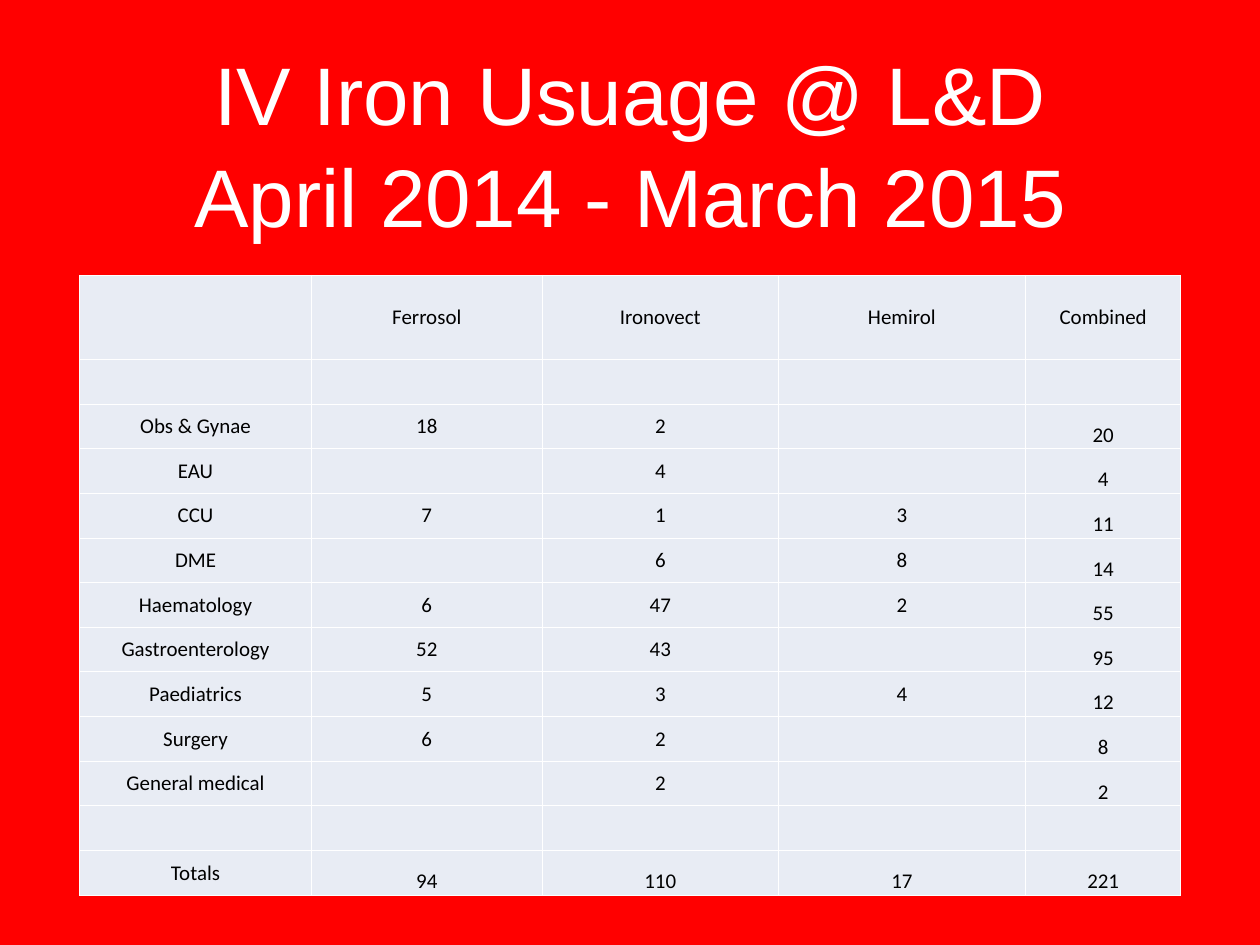
import pptx
import pptx.dml.color
import pptx.enum.text
import pptx.oxml
import pptx.oxml.ns
import pptx.util
from pptx.util import Cm

MIDDLE = pptx.enum.text.MSO_ANCHOR.MIDDLE
BOTTOM = pptx.enum.text.MSO_ANCHOR.BOTTOM
CENTER = pptx.enum.text.PP_ALIGN.CENTER
TITLE_LINES = ["IV Iron Usuage @ L&D", "April 2014 - March 2015"]
COLUMN_WIDTHS = [6.63, 6.63, 6.76, 7.09, 4.45]
HEADER_HEIGHT = 2.41
ROW_HEIGHT = 1.28
USAGE = [
    ["", "Ferrosol", "Ironovect", "Hemirol", "Combined"],
    [""] * 5,
    ["Obs & Gynae", "18", "2", "", "20"],
    ["EAU", "", "4", "", "4"],
    ["CCU", "7", "1", "3", "11"],
    ["DME", "", "6", "8", "14"],
    ["Haematology", "6", "47", "2", "55"],
    ["Gastroenterology", "52", "43", "", "95"],
    ["Paediatrics", "5", "3", "4", "12"],
    ["Surgery", "6", "2", "", "8"],
    ["General medical", "", "2", "", "2"],
    [""] * 5,
    ["Totals", "94", "110", "17", "221"],
]


def color(value):
    """Return the colour for a hex string."""
    return pptx.dml.color.RGBColor.from_string(value)


def apply_format(target, values):
    """Set each attribute of the target from a dict."""
    for name, value in values.items():
        setattr(target, name, value)


def fill_solid(fill, value):
    """Give a fill one solid colour."""
    fill.solid()
    fill.fore_color.rgb = color(value)


def margins(size, prefix="margin_"):
    """Return four equal margins as format values."""
    return {prefix + side: size for side in ("left", "top", "right", "bottom")}


def write_paragraph(paragraph, text, font, font_color, spacing=None):
    """Write one centred paragraph."""
    paragraph.text = text
    apply_format(paragraph, {"alignment": CENTER, "line_spacing": spacing})
    apply_format(paragraph.font, font)
    paragraph.font.color.rgb = color(font_color)


def add_title(slide):
    """Add the two-line title."""
    shape = slide.shapes.add_textbox(Cm(2.64), Cm(1.12), Cm(30.84), Cm(5.89))
    frame = shape.text_frame
    apply_format(frame, {"word_wrap": True, "vertical_anchor": MIDDLE, **margins(Cm(0.15))})
    font = {"name": "Arial", "size": pptx.util.Pt(66.4)}
    for index, line in enumerate(TITLE_LINES):
        paragraph = frame.add_paragraph() if index else frame.paragraphs[0]
        write_paragraph(paragraph, line, font, "FFFFFF", 1.04)


def add_borders(cell, value, width):
    """Draw a line on all four sides of a cell."""
    properties = cell._tc.get_or_add_tcPr()
    for index, tag in enumerate(("lnL", "lnR", "lnT", "lnB")):
        border = pptx.oxml.parse_xml(
            f'<a:{tag} {pptx.oxml.ns.nsdecls("a")} w="{pptx.util.Pt(width)}">'
            f'<a:solidFill><a:srgbClr val="{value}"/></a:solidFill></a:{tag}>'
        )
        properties.insert(index, border)


def add_usage_table(slide):
    """Add the table of usage by department."""
    heights = [HEADER_HEIGHT] + [ROW_HEIGHT] * (len(USAGE) - 1)
    frame = slide.shapes.add_table(
        len(USAGE), len(COLUMN_WIDTHS), Cm(2.29), Cm(7.9),
        Cm(sum(COLUMN_WIDTHS)), Cm(sum(heights)),
    )
    table = frame.table
    apply_format(table, {"first_row": False, "horz_banding": False})
    for column, width in zip(table.columns, COLUMN_WIDTHS):
        column.width = Cm(width)
    font = {"name": "Calibri", "size": pptx.util.Pt(17)}
    last_row, last_column = len(USAGE) - 1, len(COLUMN_WIDTHS) - 1
    for row_index, texts in enumerate(USAGE):
        table.rows[row_index].height = Cm(heights[row_index])
        for column_index, text in enumerate(texts):
            cell = table.cell(row_index, column_index)
            is_total = (row_index > 0 and column_index == last_column) or (
                row_index == last_row and column_index > 0
            )
            anchor = BOTTOM if is_total else MIDDLE
            apply_format(cell, {"vertical_anchor": anchor, **margins(Cm(0.03))})
            fill_solid(cell.fill, "E8ECF4")
            add_borders(cell, "FFFFFF", 1)
            write_paragraph(cell.text_frame.paragraphs[0], text, font, "000000")


def main():
    """Build the slide and save it."""
    presentation = pptx.Presentation()
    apply_format(presentation, {"slide_width": Cm(36.12), "slide_height": Cm(27.1)})
    slide = presentation.slides.add_slide(presentation.slide_layouts[6])
    fill_solid(slide.background.fill, "FF0000")
    add_title(slide)
    add_usage_table(slide)
    presentation.save("out.pptx")


if __name__ == "__main__":
    main()
